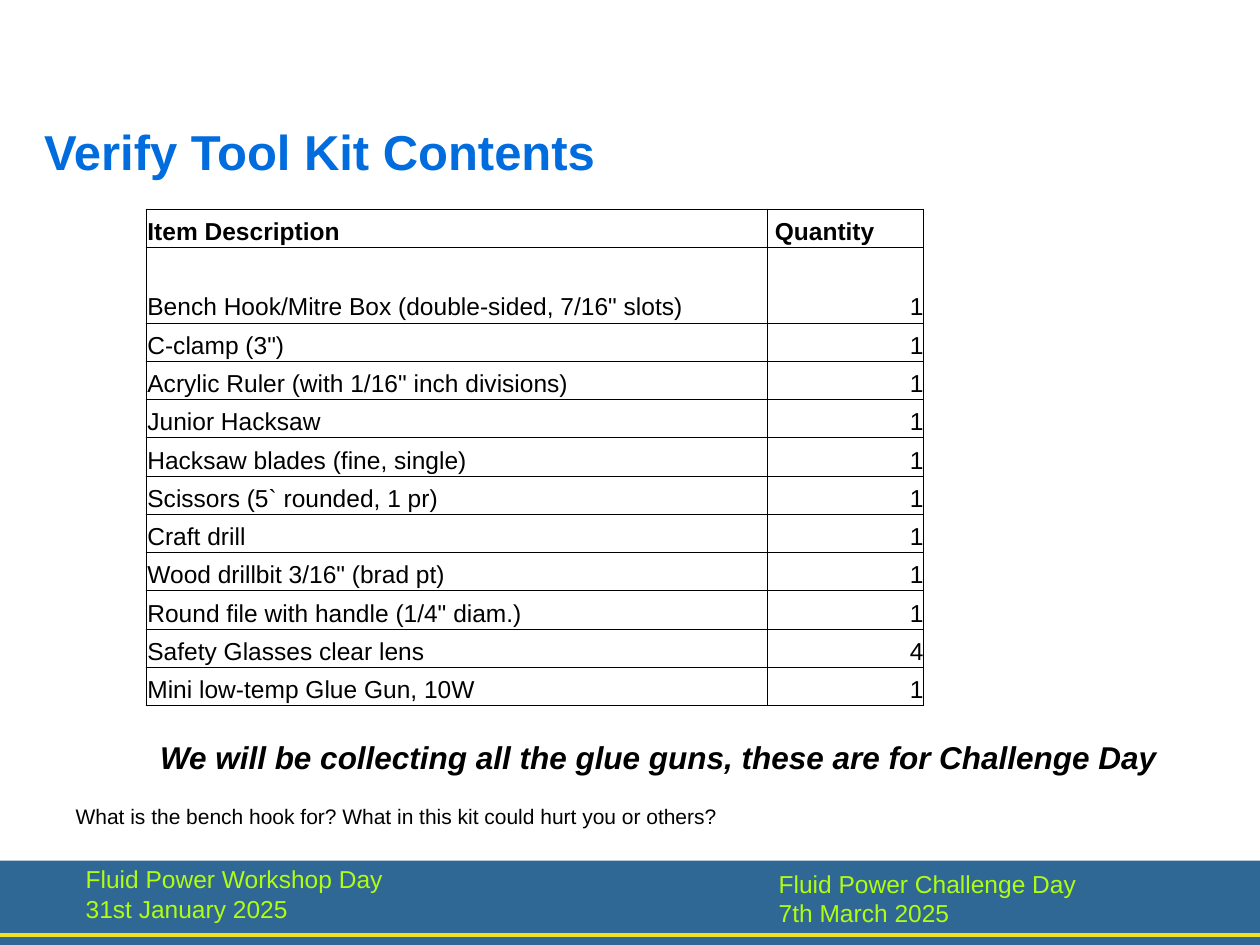
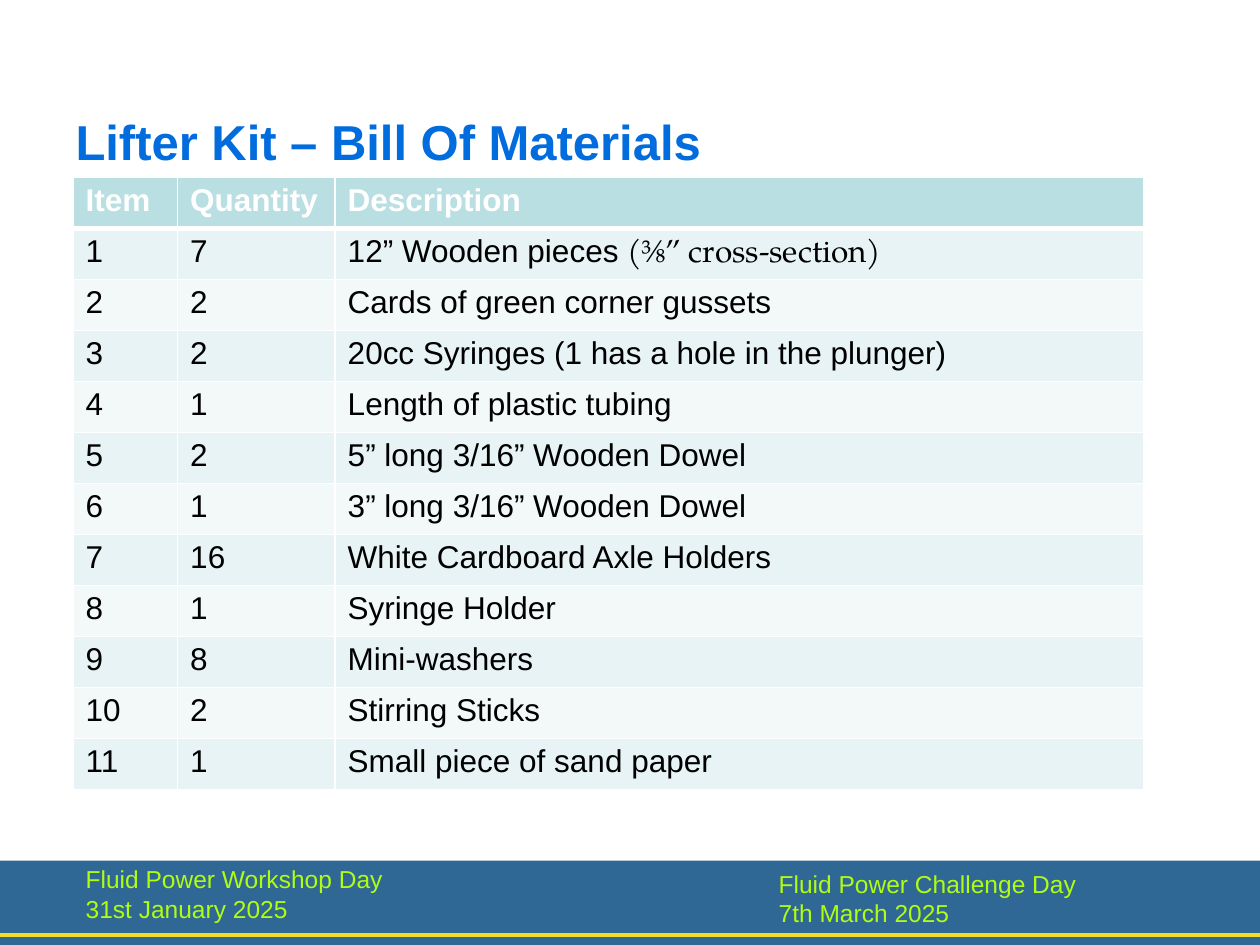
from dataclasses import dataclass

import lxml.etree
import pptx
import pptx.dml.color
import pptx.enum.shapes
import pptx.enum.text
import pptx.oxml
import pptx.oxml.ns
import pptx.presentation
import pptx.slide
import pptx.table
import pptx.text.text
import pptx.util

Inches = pptx.util.Inches
Pt = pptx.util.Pt
Align = pptx.enum.text.PP_ALIGN
Anchor = pptx.enum.text.MSO_ANCHOR

# Shared look
BAND, RULE, FOOTER = "306895", "F0DE27", "B0FD12"
TITLE, BLACK, WHITE = "006CDD", "000000", "FFFFFF"
HEADER_FILL, ROW_FILLS = "BADFE2", ("E7F3F4", "F3F8F9")


@dataclass(frozen=True)
class Style:
    size: float
    color: str = BLACK
    bold: bool = False
    italic: bool = False
    font: str = "Arial"


@dataclass(frozen=True)
class Line:
    """One paragraph: its runs, each a text with its style, and its spacing."""
    runs: tuple[tuple[str, Style], ...]
    align: Align = Align.LEFT
    spacing: float | None = None
    before: float = 0
    indent: float = 0


@dataclass(frozen=True)
class Box:
    left: float
    top: float
    width: float
    height: float

    def lengths(self) -> tuple[pptx.util.Length, ...]:
        return tuple(Inches(v) for v in (self.left, self.top, self.width, self.height))


@dataclass(frozen=True)
class Footer:
    box: Box
    text: str
    spacing: float


TITLE_STYLE = Style(28, TITLE, bold=True)
FOOTER_STYLE = Style(14, FOOTER)
FOOTERS = (
    Footer(Box(0.67, 6.86, 2.38, 0.48), "Fluid Power Workshop Day 31st January 2025", 16.8),
    Footer(Box(6.17, 6.9, 2.38, 0.48), "Fluid Power Challenge Day 7th March 2025", 16.5),
)

# Slide content
TOOLS = (
    ('Bench Hook/Mitre Box (double-sided, 7/16" slots)', 1),
    ('C-clamp (3")', 1),
    ('Acrylic Ruler (with 1/16" inch divisions)', 1),
    ("Junior Hacksaw", 1),
    ("Hacksaw blades (fine, single)", 1),
    ("Scissors (5` rounded, 1 pr)", 1),
    ("Craft drill", 1),
    ('Wood drillbit 3/16" (brad pt)', 1),
    ('Round file with handle (1/4" diam.)', 1),
    ("Safety Glasses clear lens", 4),
    ("Mini low-temp Glue Gun, 10W", 1),
)
CROSS_SECTION = "(⅜” cross-section)"
MATERIALS = (
    (7, "12” Wooden pieces "),
    (2, "Cards of green corner gussets"),
    (2, "20cc Syringes (1 has a hole in the plunger)"),
    (1, "Length of plastic tubing"),
    (2, "5” long 3/16” Wooden Dowel"),
    (1, "3” long 3/16” Wooden Dowel"),
    (16, "White Cardboard Axle Holders"),
    (1, "Syringe Holder"),
    (8, "Mini-washers"),
    (2, "Stirring Sticks"),
    (1, "Small piece of sand paper"),
)


def rgb(color: str) -> pptx.dml.color.RGBColor:
    return pptx.dml.color.RGBColor.from_string(color)


def apply(target: object, values: dict[str, object]) -> None:
    for name, value in values.items():
        setattr(target, name, value)


def write(frame: pptx.text.text.TextFrame, lines: tuple[Line, ...]) -> None:
    for number, line in enumerate(lines):
        paragraph = frame.add_paragraph() if number else frame.paragraphs[0]
        if line.indent:
            paragraph._p.get_or_add_pPr().set("marL", str(Inches(line.indent)))
        paragraph.alignment = line.align
        if line.spacing:
            paragraph.line_spacing = Pt(line.spacing)
        if line.before:
            paragraph.space_before = Pt(line.before)
        for text, style in line.runs:
            run = paragraph.add_run()
            run.text = text
            apply(run.font, {"name": style.font, "size": Pt(style.size),
                             "bold": style.bold, "italic": style.italic})
            run.font.color.rgb = rgb(style.color)


def add_text(slide: pptx.slide.Slide, box: Box, *lines: Line,
             top: float = 0, anchor: Anchor = Anchor.TOP) -> None:
    frame = slide.shapes.add_textbox(*box.lengths()).text_frame
    apply(frame, {"word_wrap": True, "vertical_anchor": anchor, "margin_left": Inches(0.01),
                  "margin_top": Inches(top), "margin_right": 0, "margin_bottom": 0})
    write(frame, lines)


def add_page(deck: pptx.presentation.Presentation, title: str, title_box: Box) -> pptx.slide.Slide:
    slide = deck.slides.add_slide(deck.slide_layouts[6])
    # Bottom band with its yellow rule
    band = slide.shapes.add_shape(pptx.enum.shapes.MSO_SHAPE.RECTANGLE,
                                  *Box(0, 6.83, 10, 0.67).lengths())
    band.shadow.inherit = False
    band.fill.solid()
    band.fill.fore_color.rgb = rgb(BAND)
    band.line.fill.background()
    rule = slide.shapes.add_connector(pptx.enum.shapes.MSO_CONNECTOR.STRAIGHT,
                                      0, Inches(7.42), Inches(10), Inches(7.42))
    rule.line.color.rgb = rgb(RULE)
    rule.line.width = Pt(2.04)
    lxml.etree.SubElement(rule._element.spPr, pptx.oxml.ns.qn("a:effectLst"))
    # Footers and title
    for footer in FOOTERS:
        add_text(slide, footer.box, Line(((footer.text, FOOTER_STYLE),), spacing=footer.spacing))
    add_text(slide, title_box, Line(((title, TITLE_STYLE),)), anchor=Anchor.BOTTOM)
    return slide


def add_grid(slide: pptx.slide.Slide, box: Box, widths: tuple[float, ...],
             heights: list[float]) -> pptx.table.Table:
    grid = slide.shapes.add_table(len(heights), len(widths), *box.lengths()).table
    apply(grid, {"first_row": False, "horz_banding": False})
    for column, width in zip(grid.columns, widths):
        column.width = Inches(width)
    for row, height in zip(grid.rows, heights):
        row.height = Inches(height)
    return grid


def fill_cell(cell: pptx.table._Cell, line: Line, left: float, top: float,
              border: str, borders: dict[str, float], fill: str | None) -> None:
    apply(cell, {"margin_left": Inches(left), "margin_top": Inches(top),
                 "margin_right": 0, "margin_bottom": 0, "vertical_anchor": Anchor.TOP})
    properties = cell._tc.get_or_add_tcPr()
    for side in "LRTB":
        properties.append(pptx.oxml.parse_xml(
            f'<a:ln{side} {pptx.oxml.ns.nsdecls("a")} w="{Pt(borders[side])}">'
            f'<a:solidFill><a:srgbClr val="{border}"/></a:solidFill></a:ln{side}>'))
    if fill:
        cell.fill.solid()
        cell.fill.fore_color.rgb = rgb(fill)
    else:
        cell.fill.background()
    write(cell.text_frame, (line,))


def build_tool_kit(deck: pptx.presentation.Presentation) -> None:
    slide = add_page(deck, "Verify Tool Kit Contents", Box(0.34, 0.94, 4.6, 0.49))
    row_height, bench_hook_height = 3.34 / len(TOOLS), 0.6
    heights = [row_height, bench_hook_height] + [row_height] * (len(TOOLS) - 1)
    grid = add_grid(slide, Box(1.16, 1.66, 6.17, 3.94), (4.93, 1.24), heights)
    for r, values in enumerate((("Item Description", "Quantity"), *TOOLS)):
        for c, value in enumerate(values):
            is_count = r > 0 and c == 1
            line = Line(((str(value), Style(14, bold=r == 0)),), spacing=15.9,
                        align=Align.RIGHT if is_count else Align.LEFT)
            left = 0 if is_count else (0.01, 0.06)[c]
            fill_cell(grid.cell(r, c), line, left, 0.36 if r == 1 else 0.07,
                      BLACK, dict.fromkeys("LRTB", 0.5), None)
    # Reminder and safety question
    add_text(slide, Box(0.59, 5.82, 8.65, 0.75),
             Line((("We will be collecting all the glue guns, these are for Challenge Day",
                    Style(18, bold=True, italic=True)),), indent=0.67),
             Line((("What is the bench hook for? What in this kit could hurt you or others?",
                    Style(12)),), before=15.6),
             top=0.04)


def build_materials(deck: pptx.presentation.Presentation) -> None:
    slide = add_page(deck, "Lifter Kit – Bill Of Materials", Box(0.59, 0.86, 5.2, 0.49))
    rows = [("Item", "Quantity", "Description")]
    rows += [(item, *material) for item, material in enumerate(MATERIALS, 1)]
    grid = add_grid(slide, Box(0.58, 1.41, 8.5, 4.86), (0.83, 1.25, 6.42),
                    [4.86 / len(rows)] * len(rows))
    for r, values in enumerate(rows):
        style = Style(18) if r else Style(18, WHITE, bold=True)
        borders = {"L": 1, "R": 1, "T": 3 if r == 1 else 1, "B": 1 if r else 3}
        fill = ROW_FILLS[(r - 1) % 2] if r else HEADER_FILL
        for c, value in enumerate(values):
            runs = ((str(value), style),)
            if (r, c) == (1, 2):
                runs += ((CROSS_SECTION, Style(18, font="TeX Gyre Pagella")),)
            fill_cell(grid.cell(r, c), Line(runs), 0.1, 0.04, WHITE, borders, fill)


def main() -> None:
    deck = pptx.Presentation()
    deck.slide_width, deck.slide_height = Inches(10), Inches(7.5)
    build_tool_kit(deck)
    build_materials(deck)
    deck.save("out.pptx")


if __name__ == "__main__":
    main()
